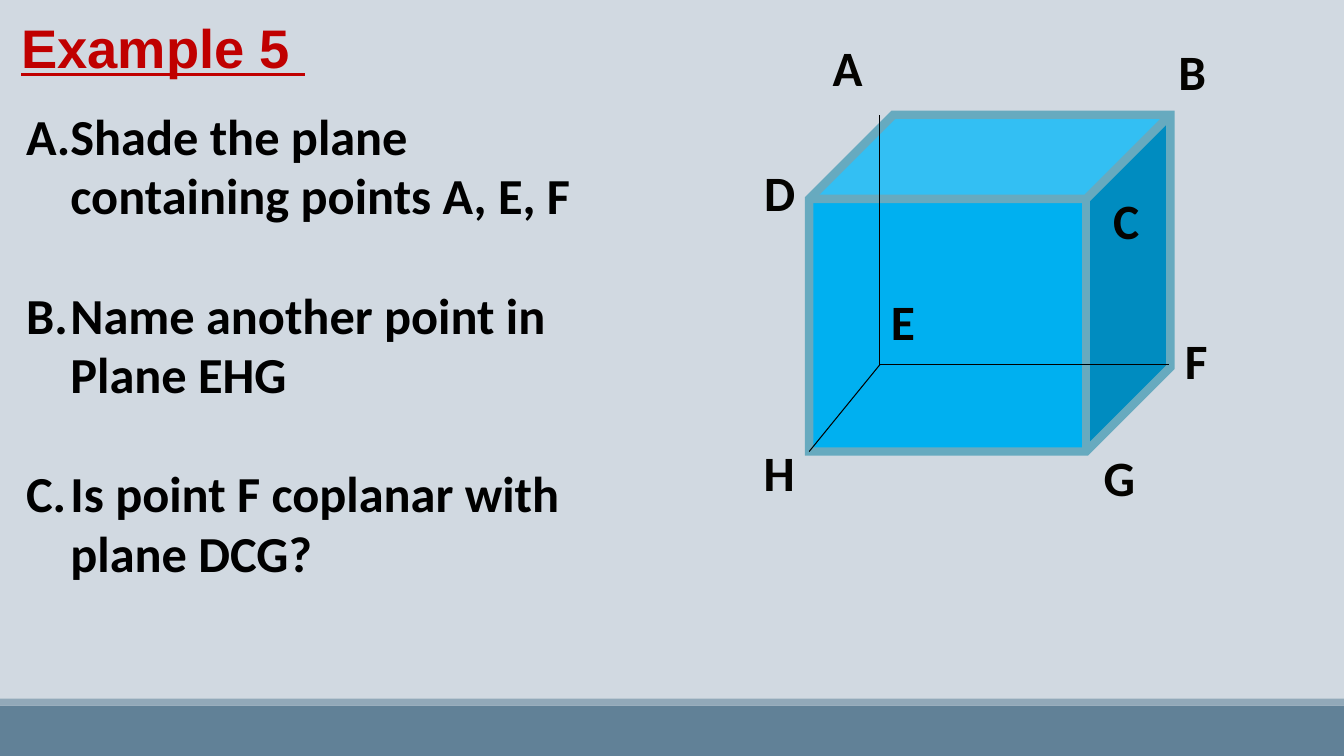
"""Build a geometry exercise slide with a labelled cube and three questions."""
import pptx
import pptx.dml.color
import pptx.enum.shapes
import pptx.enum.text
import pptx.oxml.ns
import pptx.util
from lxml import etree

HEADING = "Example 5 "
QUESTIONS = [
    "Shade the plane containing points A, E, F",
    "Name another point in Plane EHG",
    "Is point F coplanar with plane DCG?",
]
BANDS = [
    (504, 36, "618197"),
    (499, 5, "92A9B9"),
]
CUBE = (578, 82, 258, 240.5)
HIDDEN_CORNER = (628.5, 260.5)
HIDDEN_EDGE_ENDS = [(628.5, 82), (578, 322.5), (835, 260.5)]
VERTICES = {
    "A": (605.5, 23),
    "B": (851.5, 26),
    "C": (804.5, 132.5),
    "D": (557, 112.5),
    "E": (645, 204.5),
    "F": (854.5, 232.5),
    "G": (799.5, 315.5),
    "H": (556.5, 312),
}
LABEL_WIDTH, LABEL_HEIGHT = 54, 86
HANGING = 31.7

Pt = pptx.util.Pt
ALIGN = pptx.enum.text.PP_ALIGN
SHAPES = pptx.enum.shapes.MSO_SHAPE


def colour(hex_code):
    return pptx.dml.color.RGBColor.from_string(hex_code)


def points(*lengths):
    return [Pt(length) for length in lengths]


def add_solid(slide, kind, box, fill):
    solid = slide.shapes.add_shape(kind, *points(*box))
    solid.shadow.inherit = False
    solid.fill.solid()
    solid.fill.fore_color.rgb = colour(fill)
    solid.line.fill.background()
    return solid


def style(paragraph, font, size, hex_code, align):
    paragraph.alignment = align
    for run in paragraph.runs:
        run.font.name = font
        run.font.size = Pt(size)
        run.font.bold = True
        run.font.color.rgb = colour(hex_code)


def add_heading(slide):
    heading = slide.shapes.title
    heading.left, heading.top, heading.width, heading.height = points(8, 6.5, 590, 54)
    frame = heading.text_frame
    frame.text = HEADING
    frame.vertical_anchor = pptx.enum.text.MSO_ANCHOR.TOP
    frame.auto_size = pptx.enum.text.MSO_AUTO_SIZE.NONE
    style(frame.paragraphs[0], "Arial", 38.8, "C00000", ALIGN.LEFT)
    frame.paragraphs[0].line_spacing = 1.0
    frame.paragraphs[0].runs[0].font.underline = True


def add_questions(slide):
    frame = slide.shapes.add_textbox(*points(11.5, 73.5, 420, 376)).text_frame
    frame.word_wrap = True
    frame.text = "\n".join(QUESTIONS)
    for number, question in enumerate(frame.paragraphs):
        style(question, "Calibri", 36, "000000", ALIGN.LEFT)
        question.line_spacing = 0.98
        question.space_before = Pt(43 if number else 0)
        properties = question._p.get_or_add_pPr()
        properties.set("marL", str(Pt(HANGING)))
        properties.set("indent", str(-Pt(HANGING)))
        numbering = etree.SubElement(properties, pptx.oxml.ns.qn("a:buAutoNum"))
        numbering.set("type", "alphaUcPeriod")


def add_cube(slide):
    cube = add_solid(slide, SHAPES.CUBE, CUBE, "00B0F0")
    cube.adjustments[0] = 0.25
    cube.line.color.rgb = colour("67AABF")
    cube.line.width = Pt(6)
    join = etree.SubElement(cube.line._get_or_add_ln(), pptx.oxml.ns.qn("a:miter"))
    join.set("lim", "800000")
    for end in HIDDEN_EDGE_ENDS:
        edge = slide.shapes.add_connector(
            pptx.enum.shapes.MSO_CONNECTOR.STRAIGHT, *points(*HIDDEN_CORNER, *end))
        edge.line.color.rgb = colour("000000")
        edge.line.width = Pt(0.75)
        etree.SubElement(edge._element.spPr, pptx.oxml.ns.qn("a:effectLst"))


def add_vertex_labels(slide):
    for letter, (centre, top) in VERTICES.items():
        box = points(centre - LABEL_WIDTH / 2, top, LABEL_WIDTH, LABEL_HEIGHT)
        frame = slide.shapes.add_textbox(*box).text_frame
        frame.word_wrap = False
        frame.text = letter
        style(frame.paragraphs[0], "Calibri", 35.3, "040300", ALIGN.CENTER)


def main():
    deck = pptx.Presentation()
    deck.slide_width, deck.slide_height = points(960, 540)
    slide = deck.slides.add_slide(deck.slide_layouts[5])
    slide.background.fill.solid()
    slide.background.fill.fore_color.rgb = colour("D1D9E1")
    for top, height, fill in BANDS:
        add_solid(slide, SHAPES.RECTANGLE, (0, top, 960, height), fill)
    add_heading(slide)
    add_questions(slide)
    add_cube(slide)
    add_vertex_labels(slide)
    deck.save("out.pptx")


if __name__ == "__main__":
    main()
